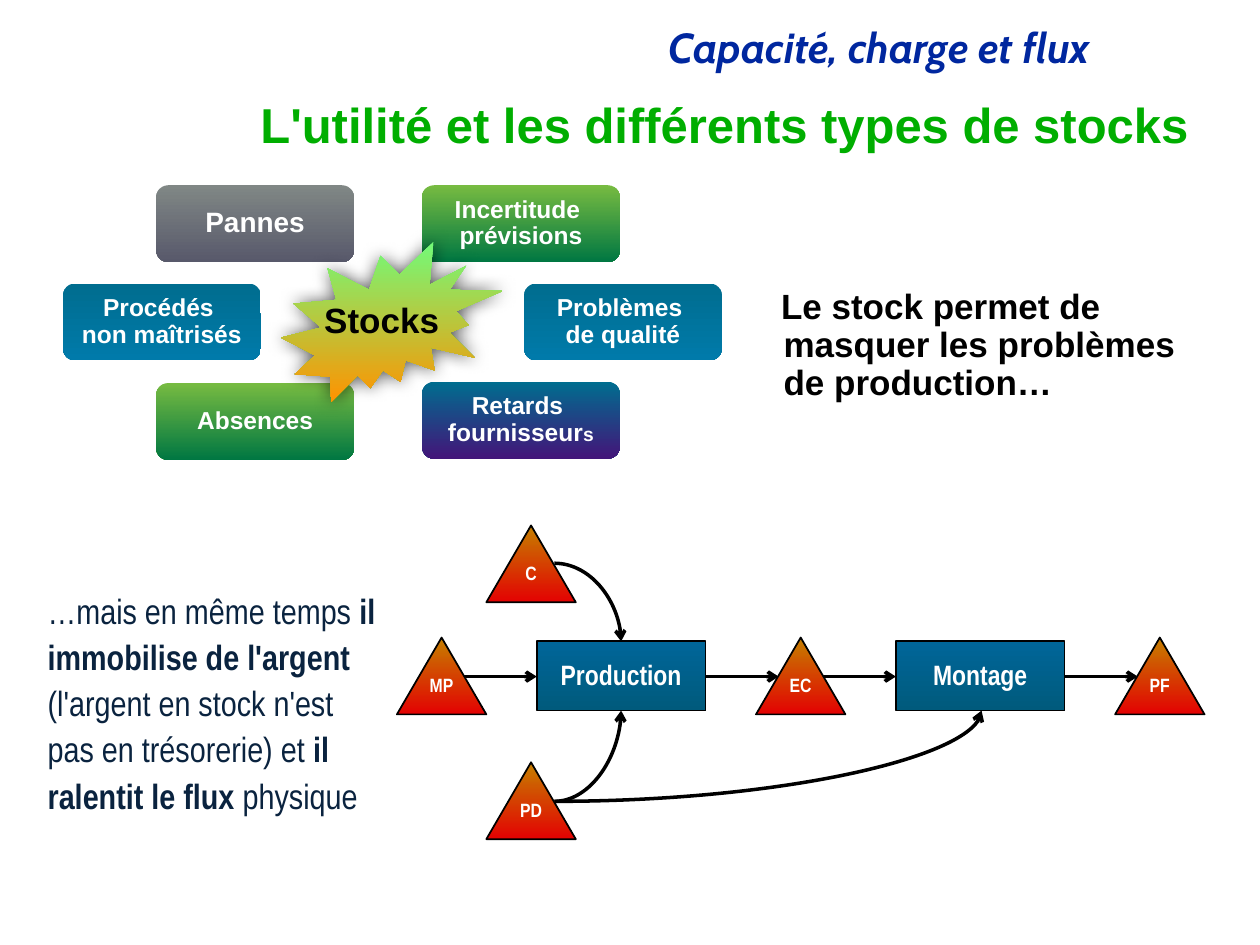
import dataclasses
import typing

import pptx
import pptx.dml.color
import pptx.enum.shapes
import pptx.enum.text
import pptx.oxml
import pptx.oxml.ns
import pptx.util

Inches = pptx.util.Inches
Pt = pptx.util.Pt
Shape = pptx.enum.shapes.MSO_SHAPE
Link = pptx.enum.shapes.MSO_CONNECTOR
Align = pptx.enum.text.PP_ALIGN
Anchor = pptx.enum.text.MSO_ANCHOR

Run = tuple[str, dict[str, typing.Any]]
Lines = list[list[Run]]


@dataclasses.dataclass
class Box:
    left: float
    top: float
    width: float
    height: float

    def args(self) -> list[int]:
        return [Inches(v) for v in dataclasses.astuple(self)]


@dataclasses.dataclass
class Tile:
    left: float
    top: float
    lines: list[str]
    tint: tuple[str, str]
    size: int = 14
    tail: str = ""


@dataclasses.dataclass
class Stock:
    left: float
    top: float
    name: str


@dataclasses.dataclass
class Arrow:
    start: tuple[float, float]
    end: tuple[float, float]
    curved: bool = False


def color(code: str) -> pptx.dml.color.RGBColor:
    return pptx.dml.color.RGBColor.from_string(code)


def style(size: int, tint: str, name: str = "Arial", bold: bool = True,
          **more: typing.Any) -> dict[str, typing.Any]:
    return {"size": Pt(size), "tint": tint, "name": name, "bold": bold, **more}


def write(shape, lines: Lines, align=Align.CENTER, anchor=Anchor.MIDDLE,
          inset: tuple[float, float] = (0, 0), space: float = 0.9) -> None:
    frame = shape.text_frame
    across, down = map(Inches, inset)
    values = {"word_wrap": True, "vertical_anchor": anchor,
              "margin_left": across, "margin_right": across,
              "margin_top": down, "margin_bottom": down}
    for key, value in values.items():
        setattr(frame, key, value)
    for i, runs in enumerate(lines):
        para = frame.add_paragraph() if i else frame.paragraphs[0]
        para.alignment, para.line_spacing = align, space
        for text, look in runs:
            run = para.add_run()
            run.text = text
            for key, value in look.items():
                if key == "tint":
                    run.font.color.rgb = color(value)
                else:
                    setattr(run.font, key, value)


def paint(shape, tint: tuple[str, str], line: bool = False) -> None:
    shape.shadow.inherit = False
    shape.fill.gradient()
    shape.fill.gradient_angle = 270
    for stop, code in zip(shape.fill.gradient_stops, tint):
        stop.color.rgb = color(code)
    if line:
        shape.line.color.rgb = color("000000")
        shape.line.width = Pt(1)
    else:
        shape.line.fill.background()


def add_text(slide, box: Box, lines: Lines, **layout):
    shape = slide.shapes.add_textbox(*box.args())
    write(shape, lines, **layout)
    return shape


def add_tile(slide, tile: Tile) -> None:
    box = Box(tile.left, tile.top, 1.57, 0.61)
    shape = slide.shapes.add_shape(Shape.ROUNDED_RECTANGLE, *box.args())
    shape.adjustments[0] = 0.155
    paint(shape, tile.tint)
    lines = [[(text, style(tile.size, "FFFFFF"))] for text in tile.lines]
    if tile.tail:
        lines[-1].append((tile.tail, style(11, "FFFFFF")))
    write(shape, lines)


def add_stock(slide, stock: Stock) -> None:
    box = Box(stock.left, stock.top, 0.71, 0.61)
    shape = slide.shapes.add_shape(Shape.ISOSCELES_TRIANGLE, *box.args())
    paint(shape, ("C68000", "E30202"), line=True)
    write(shape, [[(stock.name, style(11, "FFFFFF", NARROW))]], anchor=Anchor.TOP)


def add_step(slide, left: float, name: str) -> None:
    shape = slide.shapes.add_shape(Shape.RECTANGLE, *Box(left, 5.09, 1.34, 0.55).args())
    paint(shape, ("006699", "005A7C"), line=True)
    write(shape, [[(name, style(16, "FFFFFF", NARROW))]], inset=(0.04, 0.05))


def add_arrow(slide, arrow: Arrow) -> None:
    kind = Link.CURVE if arrow.curved else Link.STRAIGHT
    ends = [Inches(v) for v in arrow.start + arrow.end]
    line = slide.shapes.add_connector(kind, *ends)
    line.line.color.rgb = color("000000")
    line.line.width = Pt(2)
    props = line._element.spPr
    if arrow.curved:
        props.find(pptx.oxml.ns.qn("a:prstGeom")).set("prst", "curvedConnector2")
    head = pptx.oxml.parse_xml(f'<a:tailEnd {SPACE} type="arrow"/>')
    line.line._get_or_add_ln().append(head)
    props.append(pptx.oxml.parse_xml(f"<a:effectLst {SPACE}/>"))


def add_burst(slide) -> None:
    tips = [(Inches(x), Inches(y)) for x, y in BURST]
    build = slide.shapes.build_freeform(*tips[0])
    build.add_line_segments(tips[1:], close=True)
    shape = build.convert_to_shape()
    paint(shape, ("73FA79", "FF9300"))
    glow = pptx.oxml.parse_xml(
        f'<a:outerShdw {SPACE} blurRad="{Pt(10)}" dist="0" dir="0" rotWithShape="0">'
        '<a:srgbClr val="000000"><a:alpha val="68000"/></a:srgbClr></a:outerShdw>')
    shape._element.spPr.find(pptx.oxml.ns.qn("a:effectLst")).append(glow)


SPACE = pptx.oxml.ns.nsdecls("a")
NARROW = "Arial Narrow"
GREEN, BLUE = ("77BB41", "007742"), ("006D8F", "007AAA")
TILES = [
    Tile(1.24, 1.47, ["Pannes"], ("808785", "58596B"), 16),
    Tile(0.5, 2.25, ["Procédés ", "non maîtrisés"], BLUE),
    Tile(1.24, 3.04, ["Absences"], GREEN),
    Tile(3.35, 1.47, ["Incertitude ", "prévisions"], GREEN),
    Tile(4.16, 2.25, ["Problèmes ", "de qualité"], BLUE),
    Tile(3.35, 3.03, ["Retards ", "fournisseur"], ("006D8F", "431579"), tail="s"),
]
BURST = [
    (3.17, 2.18), (3.44, 1.92), (3.41, 2.26), (3.7, 2.11), (3.57, 2.3), (3.99, 2.31),
    (3.62, 2.47), (3.72, 2.58), (3.57, 2.64), (3.77, 2.84), (3.42, 2.76), (3.45, 2.94),
    (3.22, 2.86), (3.18, 3.03), (3.04, 2.94), (2.94, 3.08), (2.84, 2.98), (2.63, 3.19),
    (2.62, 2.99), (2.34, 2.97), (2.5, 2.82), (2.23, 2.68), (2.55, 2.6), (2.33, 2.41),
    (2.67, 2.38), (2.6, 2.13), (2.93, 2.3), (3.02, 2.03),
]
PITCH, MID = 2.85, 5.37
STOCKS = [Stock(3.15 + i * PITCH, 5.06, name) for i, name in enumerate(["MP", "EC", "PF"])]
STOCKS += [Stock(3.86, 4.17, "C"), Stock(3.86, 6.05, "PD")]
STEPS = [(4.26 + i * PITCH, name) for i, name in enumerate(["Production", "Montage"])]
ARROWS = [
    Arrow((4.4, 4.47), (4.93, 5.09), True),
    Arrow((4.4, 6.36), (4.93, 5.64), True),
    Arrow((4.4, 6.36), (7.79, 5.64), True),
]
for left, _ in STEPS:
    ARROWS += [Arrow((left - 0.58, MID), (left, MID)),
               Arrow((left + 1.34, MID), (left + 1.92, MID))]


def main() -> None:
    deck = pptx.Presentation()
    deck.slide_width, deck.slide_height = Inches(10), Inches(7.5)
    slide = deck.slides.add_slide(deck.slide_layouts[6])

    # Headings
    add_text(slide, Box(1.17, 0.17, 7.58, 0.46),
             [[("Capacité, charge et flux", style(24, "00279F", "Cabin", italic=True))]],
             align=Align.RIGHT, anchor=Anchor.TOP, inset=(0.1, 0.05))
    add_text(slide, Box(1.61, 0.76, 7.92, 0.5),
             [[("L'utilité et les différents types de stocks", style(28, "00AE00"))]],
             align=Align.RIGHT, inset=(0.1, 0.05))

    # Problems around the stocks
    for tile in TILES:
        add_tile(slide, tile)
    add_burst(slide)
    add_text(slide, Box(2.41, 2.35, 1.24, 0.41),
             [[("Stocks", style(20, "000000"))]], inset=(0.04, 0.04))

    # Production flow
    for arrow in ARROWS:
        add_arrow(slide, arrow)
    for stock in STOCKS:
        add_stock(slide, stock)
    for left, name in STEPS:
        add_step(slide, left, name)

    # Comments
    plain, bold = (style(20, "0A233F", NARROW, b) for b in (False, True))
    add_text(slide, Box(0.28, 4.22, 2.83, 2.68),
             [[("…mais en même temps ", plain), ("il immobilise de l'argent ", bold),
               ("(l'argent en stock n'est pas en trésorerie) et ", plain),
               ("il ralentit le flux", bold), (" physique", plain)]],
             align=Align.LEFT, inset=(0.1, 0.05), space=1.1)
    note = add_text(slide, Box(6.1, 2.25, 3.71, 1.1),
                    [[("Le stock permet de masquer les problèmes de production…",
                       style(20, "000000"))]],
                    align=Align.LEFT, anchor=Anchor.TOP, inset=(0.1, 0.05))
    props = note.text_frame.paragraphs[0]._p.get_or_add_pPr()
    for key, value in {"marL": 0.02, "indent": -0.02}.items():
        props.set(key, str(Inches(value)))

    deck.save("out.pptx")


if __name__ == "__main__":
    main()
